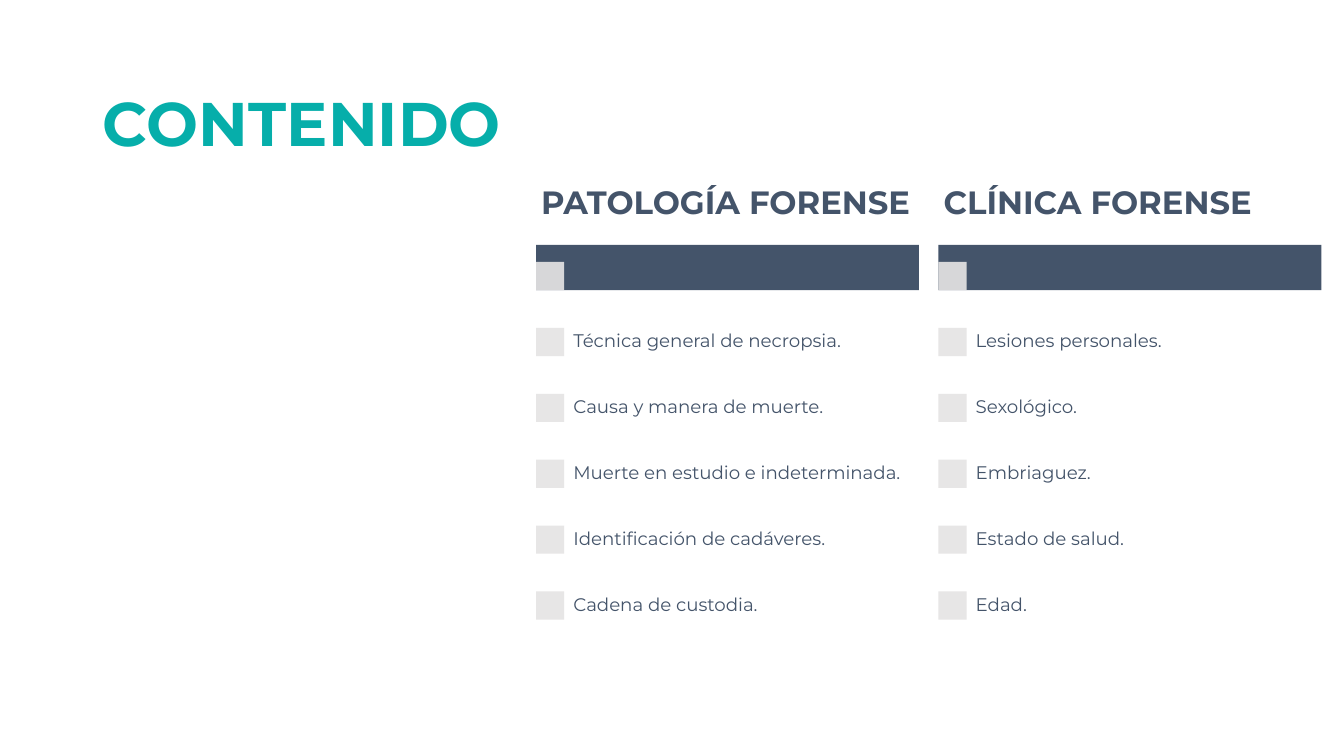
from dataclasses import dataclass

import lxml.etree
import pptx
import pptx.dml.color
import pptx.enum.shapes
import pptx.enum.text
import pptx.oxml.ns
import pptx.shapes.autoshape
import pptx.shapes.shapetree
import pptx.util
from pptx.util import Cm

COLORS = {"teal": "06AEAA", "slate": "44546A", "gray": "E7E6E6"}
FONT = "Montserrat"

COLUMN_WIDTH = 9.65
HEADING_TOP, HEADING_HEIGHT = 4.14, 2.03
BAR_TOP, BAR_HEIGHT = 6.17, 1.14
MARKER = 0.71
ROWS_TOP, ROW_HEIGHT = 7.79, 1.66


@dataclass
class Box:
    left: float
    top: float
    width: float
    height: float


@dataclass
class TextStyle:
    size: float
    color: str
    bold: bool
    inset_x: float
    inset_y: float


@dataclass
class Topic:
    left: float
    heading: str
    items: list[str]


TITLE = TextStyle(44, "teal", True, 0.25, 0.13)
HEADING = TextStyle(23, "slate", True, 0.13, 0.08)
ITEM = TextStyle(13, "slate", False, 0.25, 0.25)

TOPICS = [
    Topic(13.51, "PATOLOGÍA FORENSE", [
        "Técnica general de necropsia.",
        "Causa y manera de muerte.",
        "Muerte en estudio e indeterminada.",
        "Identificación de cadáveres.",
        "Cadena de custodia.",
    ]),
    Topic(23.65, "CLÍNICA FORENSE", [
        "Lesiones personales.",
        "Sexológico.",
        "Embriaguez.",
        "Estado de salud.",
        "Edad.",
    ]),
]

Shapes = pptx.shapes.shapetree.SlideShapes | pptx.shapes.shapetree.GroupShapes


def add_rect(shapes: Shapes, box: Box, color: str) -> pptx.shapes.autoshape.Shape:
    sp = shapes.add_shape(
        pptx.enum.shapes.MSO_SHAPE.RECTANGLE,
        Cm(box.left), Cm(box.top), Cm(box.width), Cm(box.height),
    )
    sp.shadow.inherit = False
    sp.fill.solid()
    sp.fill.fore_color.rgb = pptx.dml.color.RGBColor.from_string(COLORS[color])
    sp.line.fill.background()
    return sp


def set_alpha(sp: pptx.shapes.autoshape.Shape, percent: int) -> None:
    qn = pptx.oxml.ns.qn
    clr = sp.element.spPr.find(qn("a:solidFill")).find(qn("a:srgbClr"))
    lxml.etree.SubElement(clr, qn("a:alpha")).set("val", str(percent * 1000))


def add_text(shapes: Shapes, box: Box, text: str, style: TextStyle) -> None:
    sp = shapes.add_textbox(Cm(box.left), Cm(box.top), Cm(box.width), Cm(box.height))
    tf = sp.text_frame
    tf.word_wrap = True
    tf.vertical_anchor = pptx.enum.text.MSO_ANCHOR.MIDDLE
    tf.margin_left = tf.margin_right = Cm(style.inset_x)
    tf.margin_top = tf.margin_bottom = Cm(style.inset_y)
    p = tf.paragraphs[0]
    p.text = text
    p.line_spacing = 0.9
    p.font.name = FONT
    p.font.size = pptx.util.Pt(style.size)
    p.font.bold = style.bold
    p.font.color.rgb = pptx.dml.color.RGBColor.from_string(COLORS[style.color])


def add_topic(shapes: Shapes, topic: Topic) -> None:
    left = topic.left
    add_rect(shapes, Box(left, BAR_TOP, COLUMN_WIDTH, BAR_HEIGHT), "slate")
    marker_top = BAR_TOP + BAR_HEIGHT - MARKER
    set_alpha(add_rect(shapes, Box(left, marker_top, MARKER, MARKER), "gray"), 90)
    add_text(shapes, Box(left, HEADING_TOP, COLUMN_WIDTH, HEADING_HEIGHT), topic.heading, HEADING)
    for i, item in enumerate(topic.items):
        top = ROWS_TOP + i * ROW_HEIGHT
        marker_top = top + (ROW_HEIGHT - MARKER) / 2
        add_rect(shapes, Box(left, marker_top, MARKER, MARKER), "gray")
        text_box = Box(left + MARKER - 0.02, top, COLUMN_WIDTH - MARKER + 0.04, ROW_HEIGHT)
        add_text(shapes, text_box, item, ITEM)


def main() -> None:
    prs = pptx.Presentation()
    prs.slide_width, prs.slide_height = Cm(33.87), Cm(19.05)
    s = prs.slides.add_slide(prs.slide_layouts[6])
    add_text(s.shapes, Box(2.34, 1.35, 10.64, 3.68), "CONTENIDO", TITLE)
    for topic in TOPICS:
        add_topic(s.shapes.add_group_shape().shapes, topic)
    prs.save("out.pptx")


if __name__ == "__main__":
    main()
